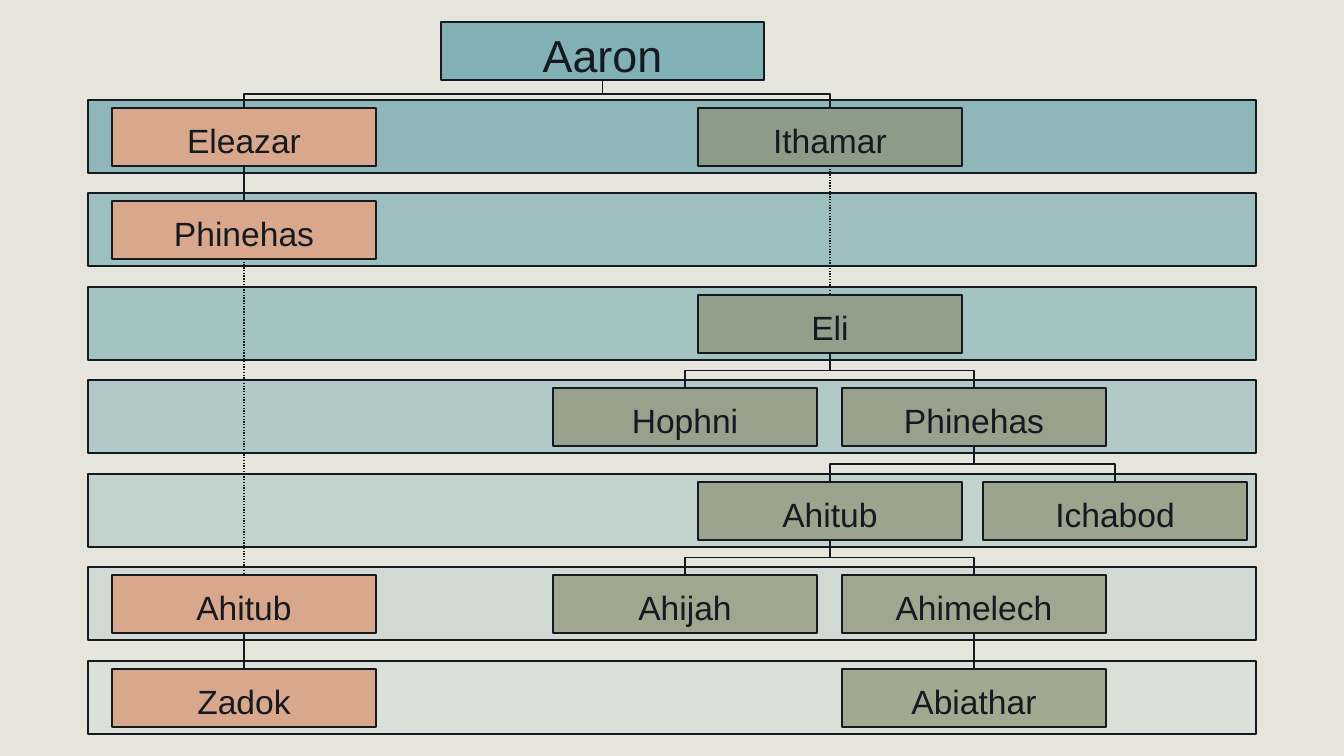
from lxml import etree
from pptx import Presentation
from pptx.dml.color import RGBColor
from pptx.enum.dml import MSO_LINE
from pptx.enum.shapes import MSO_CONNECTOR, MSO_SHAPE
from pptx.enum.text import MSO_ANCHOR, PP_ALIGN
from pptx.oxml.ns import qn
from pptx.util import Pt

RECTANGLE = MSO_SHAPE.RECTANGLE
STRAIGHT, ELBOW = MSO_CONNECTOR.STRAIGHT, MSO_CONNECTOR.ELBOW
DOTTED = MSO_LINE.ROUND_DOT
MIDDLE, CENTER = MSO_ANCHOR.MIDDLE, PP_ALIGN.CENTER
BOTTOM_SIDE, TOP_SIDE = 2, 0

CREAM = RGBColor(0xE5, 0xE5, 0xDB)
INK = RGBColor(0x15, 0x1A, 0x20)
TEAL = RGBColor(0x81, 0xB0, 0xB5)
PEACH = RGBColor(0xD9, 0xA7, 0x8C)
OLIVE = RGBColor(0x8B, 0x90, 0x72)

EMU_PER_PX = 914400 / 134.4
BAND_LEFT, BAND_WIDTH, BAND_HEIGHT = 88, 1168, 73
BAND_OPACITIES = [85, 70, 65, 50, 35, 20, 10]
BOX_WIDTH, BOX_HEIGHT, BOX_INSET = 264, 58, 8
COLUMN_LEFTS = [112, 553, 698, 842, 983]
OLIVE_OPACITY = 69

ELEAZAR_LINE = [("Eleazar", 0, 0), ("Phinehas", 1, 0), ("Ahitub", 5, 0), ("Zadok", 6, 0)]
ITHAMAR_LINE = [
    ("Ithamar", 0, 2), ("Eli", 2, 2), ("Hophni", 3, 1), ("Phinehas", 3, 3),
    ("Ahitub", 4, 2), ("Ichabod", 4, 4), ("Ahijah", 5, 1),
    ("Ahimelech", 5, 3), ("Abiathar", 6, 3),
]
BRANCHES = [
    ((2, 2), (3, 1)), ((2, 2), (3, 3)), ((3, 3), (4, 2)),
    ((3, 3), (4, 4)), ((4, 2), (5, 1)), ((4, 2), (5, 3)),
]
DIRECT_DESCENTS = [((0, 0), (1, 0)), ((5, 0), (6, 0)), ((5, 3), (6, 3))]
DISTANT_DESCENTS = [((1, 0), (5, 0)), ((0, 2), (2, 2))]


def px(length):
    """Turn pixels into EMU."""
    return round(length * EMU_PER_PX)


def band_top(row):
    """Return the top of a generation band in pixels."""
    return 100 + row * 187 // 2


def add_rectangle(slide, left, top, width, height, color, opacity=100):
    """Add an outlined rectangle with an optionally translucent fill."""
    rectangle = slide.shapes.add_shape(RECTANGLE, px(left), px(top), px(width), px(height))
    rectangle.shadow.inherit = False
    rectangle.fill.solid()
    rectangle.fill.fore_color.rgb = color
    if opacity < 100:
        fill_color = rectangle.fill._xPr.find(qn("a:solidFill"))[0]
        etree.SubElement(fill_color, qn("a:alpha"), val=str(opacity * 1000))
    rectangle.line.color.rgb = INK
    rectangle.line.width = Pt(0.75)
    return rectangle


def add_person(slide, name, left, top, width, color, opacity=100, size=18):
    """Add a named box of the family tree."""
    person = add_rectangle(slide, left, top, width, BOX_HEIGHT, color, opacity)
    frame = person.text_frame
    frame.text = name
    frame.word_wrap = True
    frame.vertical_anchor = MIDDLE
    frame.margin_left = frame.margin_right = px(13)
    frame.margin_top = frame.margin_bottom = px(13)
    paragraph = frame.paragraphs[0]
    paragraph.alignment = CENTER
    paragraph.line_spacing = 1.15
    font = paragraph.runs[0].font
    font.name = "Arial"
    font.size = Pt(size)
    font.color.rgb = INK
    return person


def style_connector(connector):
    """Give a connector a thin dark line without a shadow."""
    connector.line.color.rgb = INK
    connector.line.width = Pt(0.75)
    etree.SubElement(connector._element.spPr, qn("a:effectLst"))


def add_descent(slide, parent, child, dotted=False):
    """Join a parent to the child straight below."""
    descent = slide.shapes.add_connector(STRAIGHT, 0, 0, 0, 0)
    descent.begin_connect(parent, BOTTOM_SIDE)
    descent.end_connect(child, TOP_SIDE)
    style_connector(descent)
    if dotted:
        descent.line.dash_style = DOTTED


def add_branch(slide, parent, child):
    """Draw an elbow from a parent's bottom to a child's top, turned to leave downwards."""
    start_x, start_y = parent.left + parent.width // 2, parent.top + parent.height
    end_x, end_y = child.left + child.width // 2, child.top
    middle_x, middle_y = (start_x + end_x) // 2, (start_y + end_y) // 2
    half_drop, half_span = (end_y - start_y) // 2, abs(end_x - start_x) // 2
    goes_right = end_x > start_x
    reach = -half_drop if goes_right else half_drop
    branch = slide.shapes.add_connector(
        ELBOW, middle_x - reach, middle_y - half_span, middle_x + reach, middle_y + half_span
    )
    branch._element.spPr.find(qn("a:xfrm")).set("rot", str((270 if goes_right else 90) * 60000))
    style_connector(branch)


def main():
    """Build the family tree of Aaron."""
    presentation = Presentation()
    presentation.slide_width, presentation.slide_height = px(1344), px(756)
    slide = presentation.slides.add_slide(presentation.slide_layouts[6])
    slide.background.fill.solid()
    slide.background.fill.fore_color.rgb = CREAM

    for row, opacity in enumerate(BAND_OPACITIES):
        add_rectangle(slide, BAND_LEFT, band_top(row), BAND_WIDTH, BAND_HEIGHT, TEAL, opacity)

    aaron = add_person(slide, "Aaron", 441, 22, 323, TEAL, size=24)
    people = {}
    for family, color, opacity in [(ELEAZAR_LINE, PEACH, 100), (ITHAMAR_LINE, OLIVE, OLIVE_OPACITY)]:
        for name, row, column in family:
            people[row, column] = add_person(
                slide, name, COLUMN_LEFTS[column], band_top(row) + BOX_INSET, BOX_WIDTH, color, opacity
            )

    for son in [(0, 0), (0, 2)]:
        add_branch(slide, aaron, people[son])
    for parent, child in BRANCHES:
        add_branch(slide, people[parent], people[child])
    for parent, child in DIRECT_DESCENTS:
        add_descent(slide, people[parent], people[child])
    for parent, child in DISTANT_DESCENTS:
        add_descent(slide, people[parent], people[child], dotted=True)

    presentation.save("out.pptx")


if __name__ == "__main__":
    main()
